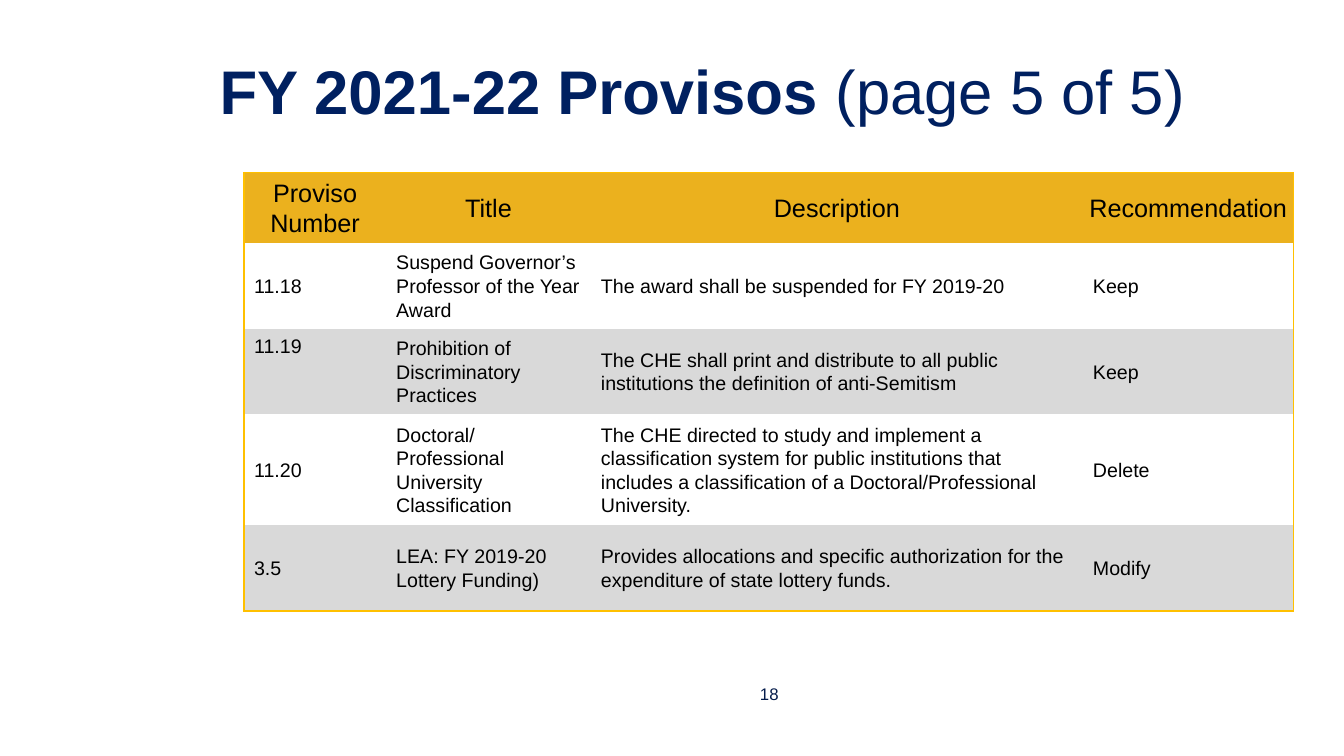
from lxml import etree
from pptx import Presentation
from pptx.dml.color import RGBColor
from pptx.enum.text import MSO_ANCHOR, PP_ALIGN
from pptx.oxml.ns import qn
from pptx.util import Inches, Pt

LEFT, CENTER = PP_ALIGN.LEFT, PP_ALIGN.CENTER
TOP, MIDDLE = MSO_ANCHOR.TOP, MSO_ANCHOR.MIDDLE

TITLE = [("FY 2021-22 Provisos ", True), ("(page 5 of 5)", False)]
PAGE_NUMBER = "18"
HEADERS = ["Proviso Number", "Title", "Description", "Recommendation"]
PROVISOS = [
    ("11.18", "Suspend Governor’s Professor of the Year Award",
     "The award shall be suspended for FY 2019-20", "Keep"),
    ("11.19", "Prohibition of Discriminatory Practices",
     "The CHE shall print and distribute to all public institutions "
     "the definition of anti-Semitism", "Keep"),
    ("11.20", "Doctoral/Professional University Classification",
     "The CHE directed to study and implement a classification system for "
     "public institutions that includes a classification of a "
     "Doctoral/Professional University.", "Delete"),
    ("3.5", "LEA: FY 2019‑20 Lottery Funding)",
     "Provides allocations and specific authorization for the expenditure "
     "of state lottery funds.", "Modify"),
]
TOP_ALIGNED = "11.19"

COL_WIDTHS = [1.41, 2.03, 4.88, 2.09]
HEADER_HEIGHT, ROW_HEIGHT = 0.63, 0.85

THEME = {
    "font": "Arial",
    "title": "002060", "page": "051C4B", "text": "000000",
    "header": "EBB11E", "plain": "FFFFFF", "band": "D9D9D9", "border": "FFC000",
    "title_size": 44, "page_size": 12, "header_size": 18, "body_size": 14,
}


def write(tf, runs, size, color, align=LEFT, spacing=None):
    """Fill the first paragraph with (text, bold) runs."""
    tf.word_wrap = True
    p = tf.paragraphs[0]
    p.alignment = align
    if spacing:
        p.line_spacing = spacing
    for text, bold in runs:
        r = p.add_run()
        r.text = text
        r.font.name = THEME["font"]
        r.font.size = Pt(size)
        r.font.bold = bold
        r.font.color.rgb = RGBColor.from_string(color)


def add_text(s, box, runs, **fmt):
    tf = s.shapes.add_textbox(*map(Inches, box)).text_frame
    tf.vertical_anchor = MIDDLE
    write(tf, runs, **fmt)


def set_borders(cell, drawn):
    """Draw the sides named in drawn and clear the others."""
    props = cell._tc.get_or_add_tcPr()
    for i, side in enumerate("LRTB"):
        ln = etree.Element(qn("a:ln" + side), w=str(Pt(1)))
        if side in drawn:
            fill = etree.SubElement(ln, qn("a:solidFill"))
            etree.SubElement(fill, qn("a:srgbClr"), val=THEME["border"])
        else:
            etree.SubElement(ln, qn("a:noFill"))
        props.insert(i, ln)


def add_provisos(s):
    rows = [HEADERS, *PROVISOS]
    last_row, last_col = len(rows) - 1, len(HEADERS) - 1
    heights = [HEADER_HEIGHT] + [ROW_HEIGHT] * len(PROVISOS)
    box = (2.42, 1.71, sum(COL_WIDTHS), sum(heights))
    table = s.shapes.add_table(len(rows), len(HEADERS), *map(Inches, box)).table
    table.first_row = table.horz_banding = False
    for column, width in zip(table.columns, COL_WIDTHS):
        column.width = Inches(width)
    for i, (values, height) in enumerate(zip(rows, heights)):
        table.rows[i].height = Inches(height)
        is_header = i == 0
        fill = "header" if is_header else "plain" if i % 2 else "band"
        for j, text in enumerate(values):
            cell = table.cell(i, j)
            cell.vertical_anchor = TOP if text == TOP_ALIGNED else MIDDLE
            if is_header:
                cell.margin_left = cell.margin_right = Inches(0.05)
                cell.margin_top = cell.margin_bottom = Inches(0.03)
            cell.fill.solid()
            cell.fill.fore_color.rgb = RGBColor.from_string(THEME[fill])
            write(cell.text_frame, [(text, False)],
                  size=THEME["header_size" if is_header else "body_size"],
                  color=THEME["text"], align=CENTER if is_header else LEFT,
                  spacing=1.07)
            edges = {"L": j == 0, "R": j == last_col,
                     "T": i == 0, "B": i == last_row}
            set_borders(cell, [side for side, outer in edges.items() if outer])


def main():
    prs = Presentation()
    prs.slide_width, prs.slide_height = Inches(13.33), Inches(7.5)
    s = prs.slides.add_slide(prs.slide_layouts[6])
    add_text(s, (2.08, 0.31, 11.1, 1.25), TITLE,
             size=THEME["title_size"], color=THEME["title"], spacing=0.9)
    add_text(s, (7.29, 6.68, 0.68, 0.4), [(PAGE_NUMBER, False)],
             size=THEME["page_size"], color=THEME["page"], align=CENTER)
    add_provisos(s)
    prs.save("out.pptx")


if __name__ == "__main__":
    main()
